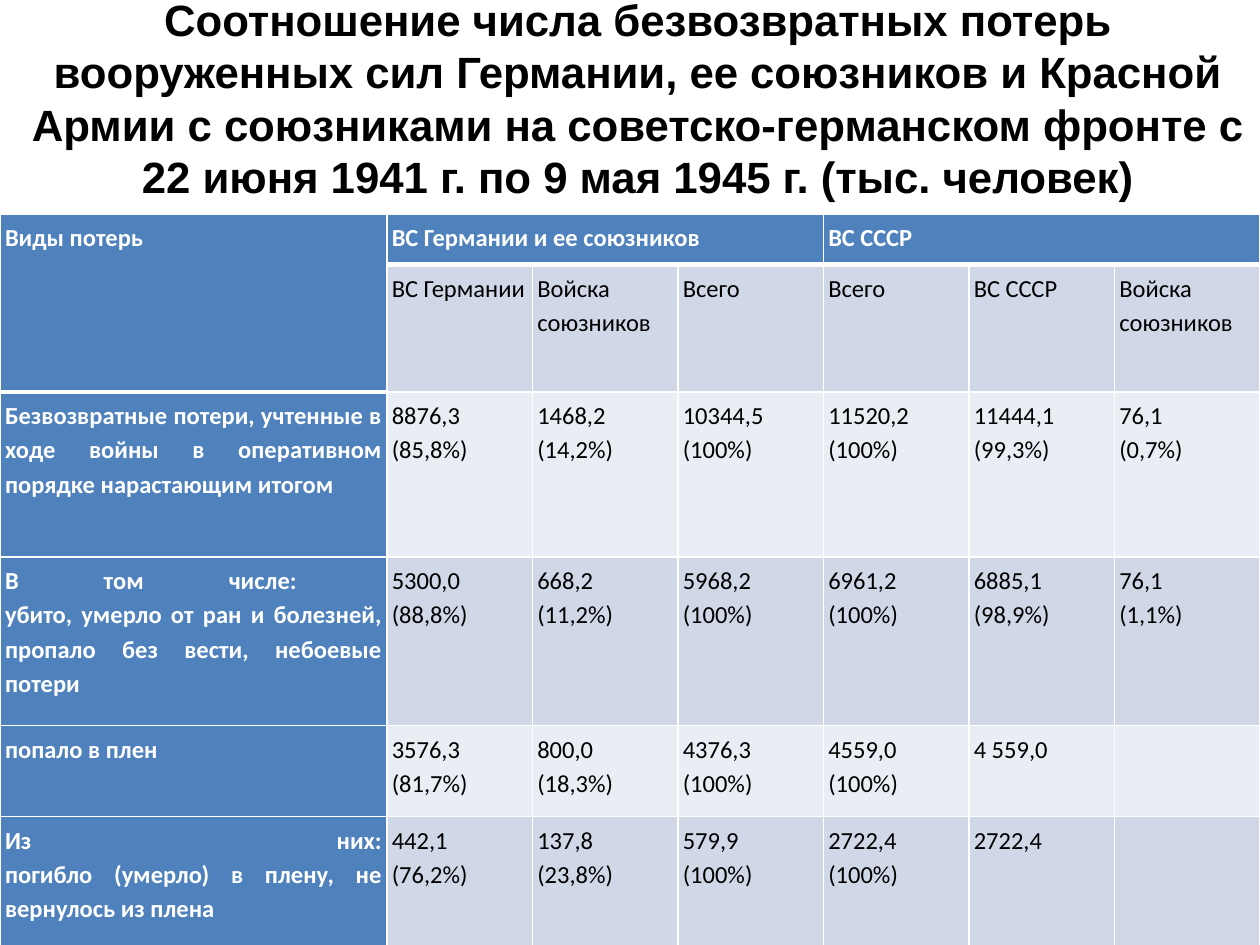
from dataclasses import dataclass

from lxml import etree
from pptx import Presentation
from pptx.dml.color import RGBColor
from pptx.enum import text
from pptx.oxml import ns
from pptx.util import Inches, Pt


@dataclass(frozen=True)
class Theme:
    white: str = "FFFFFF"
    black: str = "000000"
    head: str = "4F81BD"
    dark: str = "D0D8E8"
    light: str = "E9EDF4"
    title: int = 25
    body: int = 14


THEME = Theme()

TITLE = ("Соотношение числа безвозвратных потерь вооруженных сил Германии, "
         "ее союзников и Красной Армии с союзниками на советско-германском "
         "фронте с 22 июня 1941 г. по 9 мая 1945 г. (тыс. человек)")

COLS = [3.07] + [1.155] * 6
ROWS = [0.4, 1.01, 1.31, 1.34, 0.72, 1.03]
LOSSES = [
    ["Виды потерь", "ВС Германии и ее союзников", "", "", "ВС СССР", "", ""],
    ["", "ВС Германии", "Войска союзников", "Всего",
     "Всего", "ВС СССР", "Войска союзников"],
    ["Безвозвратные потери, учтенные в ходе войны в оперативном порядке "
     "нарастающим итогом",
     "8876,3 (85,8%)", "1468,2 \n(14,2%)", "10344,5 (100%)",
     "11520,2 (100%)", "11444,1 (99,3%)", "76,1\n(0,7%)"],
    ["В том числе: \nубито, умерло от ран и болезней, пропало без вести, "
     "небоевые потери",
     "5300,0\n(88,8%)", "668,2\n(11,2%)", "5968,2 (100%)",
     "6961,2 (100%)", "6885,1 \n(98,9%)", "76,1 \n(1,1%)"],
    ["попало в плен", "3576,3 (81,7%)", "800,0 \n(18,3%)", "4376,3 (100%)",
     "4559,0 (100%)", "4 559,0", ""],
    ["Из них:\nпогибло (умерло) в плену, не вернулось из плена",
     "442,1 \n(76,2%)", "137,8 \n(23,8%)", "579,9 \n(100%)",
     "2722,4 \n(100%)", "2722,4", ""],
]
# Merged header cells: first and last (row, column)
SPANS = [((0, 0), (1, 0)), ((0, 1), (0, 3)), ((0, 4), (0, 6))]


def style(para, face, size, color, bold, align):
    para.alignment = align
    font = para.font
    font.name, font.size, font.bold = face, Pt(size), bold
    font.color.rgb = RGBColor.from_string(color)


def add_title(slide):
    title = slide.shapes.title
    title.left, title.top = Inches(0), Inches(0)
    title.width, title.height = Inches(10.12), Inches(1.55)
    frame = title.text_frame
    frame.text = TITLE
    frame.word_wrap = True
    frame.auto_size = text.MSO_AUTO_SIZE.NONE
    frame.vertical_anchor = text.MSO_ANCHOR.MIDDLE
    style(frame.paragraphs[0], "Arial", THEME.title, THEME.black, True,
          text.PP_ALIGN.CENTER)


def add_edges(cell, top, bottom):
    props = cell._tc.get_or_add_tcPr()
    edges = {"lnL": 1, "lnR": 1, "lnT": top, "lnB": bottom}
    # Border lines come before the fill in the cell properties
    for spot, (tag, width) in enumerate(edges.items()):
        line = etree.Element(ns.qn(f"a:{tag}"), w=str(Pt(width)))
        fill = etree.SubElement(line, ns.qn("a:solidFill"))
        etree.SubElement(fill, ns.qn("a:srgbClr"), val=THEME.white)
        props.insert(spot, line)


def fill_cell(cell, words, row, col):
    head = row == 0 or col == 0
    band = THEME.light if row % 2 == 0 else THEME.dark
    cell.fill.solid()
    cell.fill.fore_color.rgb = RGBColor.from_string(
        THEME.head if head else band)
    cell.margin_left = cell.margin_right = Inches(0.04)
    cell.margin_top = cell.margin_bottom = Inches(0.04)

    para = cell.text_frame.paragraphs[0]
    para.text = words
    para.line_spacing = 1.15
    style(para, "Calibri", THEME.body, THEME.white if head else THEME.black,
          head, text.PP_ALIGN.JUSTIFY)

    # A thick line closes the header
    last = 1 if col == 0 else 0
    add_edges(cell, 3 if row == last + 1 else 1, 3 if row <= last else 1)


def add_losses(slide):
    frame = slide.shapes.add_table(
        len(ROWS), len(COLS), Inches(0), Inches(1.7),
        Inches(sum(COLS)), Inches(sum(ROWS)))
    table = frame.table
    table.first_row = table.horz_banding = False
    for col, width in zip(table.columns, COLS):
        col.width = Inches(width)
    for row, height in zip(table.rows, ROWS):
        row.height = Inches(height)
    for row, line in enumerate(LOSSES):
        for col, words in enumerate(line):
            fill_cell(table.cell(row, col), words, row, col)
    for first, last in SPANS:
        table.cell(*first).merge(table.cell(*last))


def main():
    deck = Presentation()
    deck.slide_width, deck.slide_height = Inches(10), Inches(7.5)
    slide = deck.slides.add_slide(deck.slide_layouts[5])
    add_title(slide)
    add_losses(slide)
    deck.save("out.pptx")


if __name__ == "__main__":
    main()
